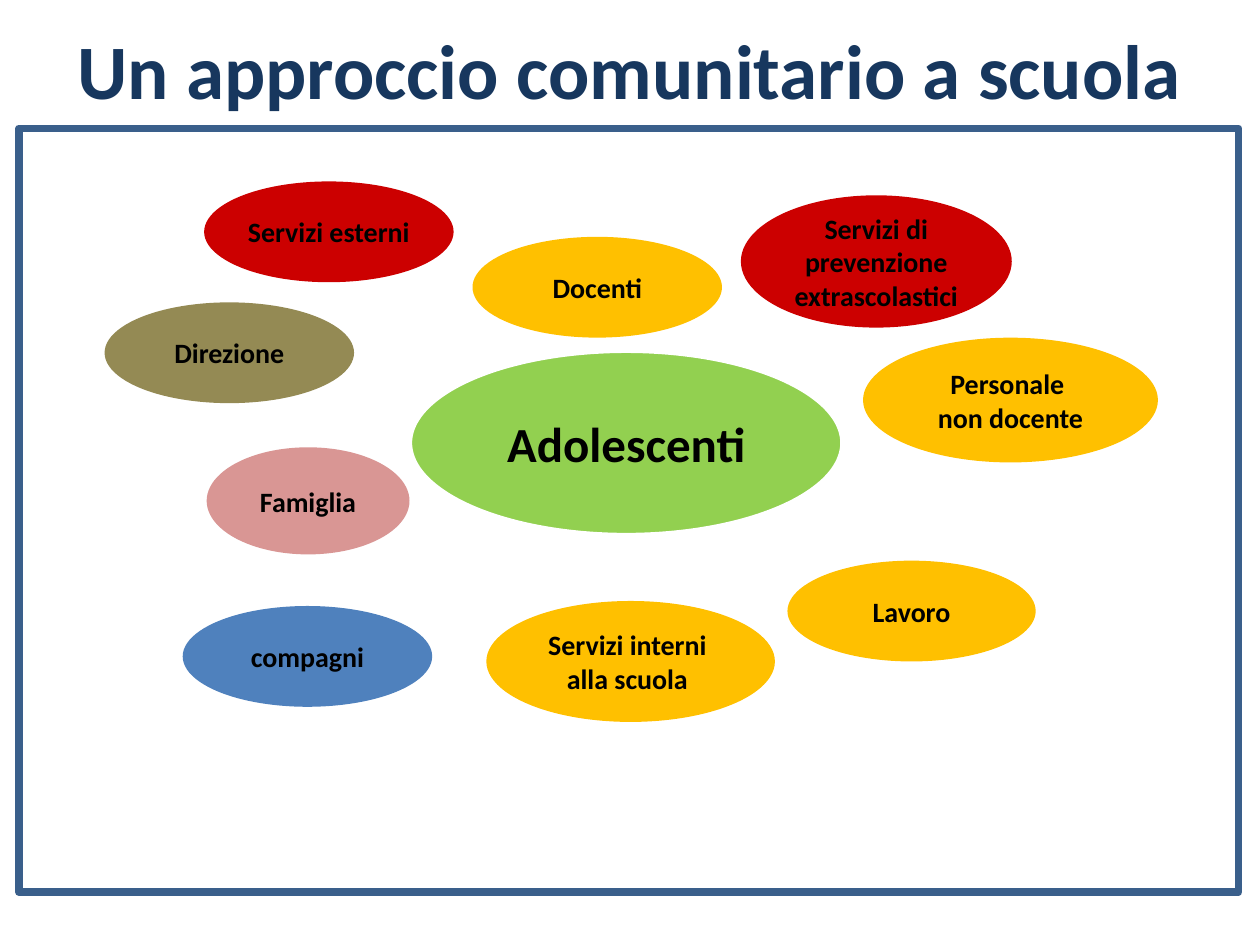
import pptx
import pptx.util
import pptx.dml.color
import pptx.enum.shapes
import pptx.enum.text

RGBColor = pptx.dml.color.RGBColor
NAVY = RGBColor(0x17, 0x37, 0x5E)
STEEL = RGBColor(0x3A, 0x5F, 0x8B)
BLUE = RGBColor(0x4F, 0x81, 0xBD)
GREEN = RGBColor(0x92, 0xD0, 0x50)
OLIVE = RGBColor(0x94, 0x8A, 0x54)
PINK = RGBColor(0xD9, 0x96, 0x94)
RED = RGBColor(0xCC, 0x00, 0x00)
GOLD = RGBColor(0xFF, 0xC0, 0x00)
BLACK = RGBColor(0x00, 0x00, 0x00)
WHITE = RGBColor(0xFF, 0xFF, 0xFF)

COLS, ROWS = 100, 75
SHAPE = pptx.enum.shapes.MSO_SHAPE
ANCHOR = pptx.enum.text.MSO_ANCHOR
CENTER = pptx.enum.text.PP_ALIGN.CENTER


def apply(obj, vals):
    for name, val in vals.items():
        setattr(obj, name, val)


class Deck:
    font = "Calibri"
    edge = pptx.util.Pt(4.5)

    def __init__(self):
        self.prs = pptx.Presentation()
        apply(self.prs, {"slide_width": pptx.util.Inches(10),
                         "slide_height": pptx.util.Inches(7.5)})
        self.slide = self.prs.slides.add_slide(self.prs.slide_layouts[5])

    def box(self, col, row, wide, high):
        """Turn grid columns and rows into slide lengths."""
        x = self.prs.slide_width / COLS
        y = self.prs.slide_height / ROWS
        return [round(n) for n in (col * x, row * y, wide * x, high * y)]

    def label(self, frame, text, size, color):
        frame.text = text
        for par in frame.paragraphs:
            par.alignment = CENTER
            for run in par.runs:
                apply(run.font, {"name": self.font, "bold": True,
                                 "size": pptx.util.Pt(size)})
                run.font.color.rgb = color

    def title(self, text, *cell):
        shape = self.slide.shapes.title
        apply(shape, dict(zip(("left", "top", "width", "height"),
                              self.box(*cell))))
        frame = shape.text_frame
        self.label(frame, text, 44, NAVY)
        apply(frame, {"vertical_anchor": ANCHOR.TOP, "margin_top": 0,
                      "word_wrap": True})

    def shape(self, kind, cell, fill=None, line=None):
        shape = self.slide.shapes.add_shape(kind, *self.box(*cell))
        shape.shadow.inherit = False
        for part, color in ((shape.fill, fill), (shape.line.fill, line)):
            if color is None:
                part.background()
            else:
                part.solid()
                part.fore_color.rgb = color
        if line is not None:
            shape.line.width = self.edge
        return shape

    def oval(self, text, fill, cell, size=16, line=None):
        frame = self.shape(SHAPE.OVAL, cell, fill, line).text_frame
        self.label(frame, text, size, BLACK)
        apply(frame, {"vertical_anchor": ANCHOR.MIDDLE, "word_wrap": False})

    def frame(self, *cell):
        self.shape(SHAPE.RECTANGLE, cell, line=STEEL)


GROUPS = [
    ("Direzione", OLIVE, (8.3, 24, 19.8, 8)),
    ("compagni", BLUE, (14.5, 48.1, 19.8, 8)),
    ("Famiglia", PINK, (16.4, 35.5, 16.1, 8.5)),
    ("Servizi esterni", RED, (16.2, 14.4, 19.8, 8)),
    ("Servizi di\n prevenzione \nextrascolastici", RED,
     (58.8, 15.5, 21.5, 10.5)),
    ("Docenti", GOLD, (37.5, 18.8, 19.8, 8)),
    ("Personale \nnon docente", GOLD, (68.5, 26.8, 23.4, 9.9)),
    ("Lavoro", GOLD, (62.5, 44.5, 19.7, 8)),
    ("Servizi interni \nalla scuola ", GOLD, (38.6, 47.7, 22.9, 9.6)),
]


def main():
    deck = Deck()
    deck.title("Un approccio comunitario a scuola", 5, 1.8, 90, 12.5)
    deck.oval("Adolescenti", GREEN, (32.4, 27.7, 34.6, 14.9), 28, WHITE)
    for text, fill, cell in GROUPS:
        deck.oval(text, fill, cell)
    deck.frame(1.5, 10.2, 96.8, 60.6)
    deck.prs.save("out.pptx")


if __name__ == "__main__":
    main()
